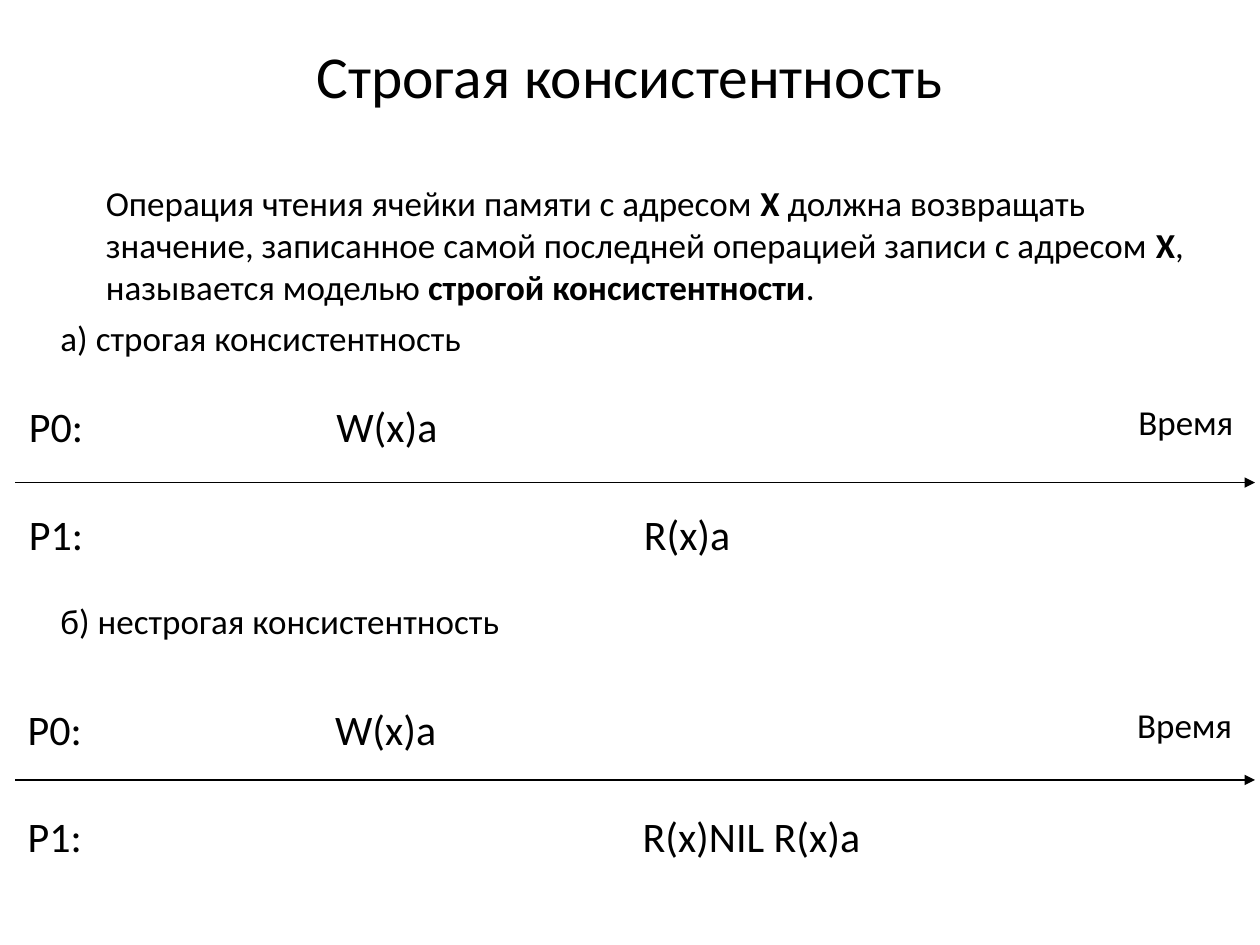
from dataclasses import dataclass

from lxml import etree
from pptx import Presentation
from pptx.dml.color import RGBColor
from pptx.enum.shapes import MSO_CONNECTOR
from pptx.enum.text import MSO_ANCHOR, MSO_AUTO_SIZE, PP_ALIGN
from pptx.oxml.ns import qn
from pptx.util import Inches, Pt

LEFT, CENTER, RIGHT = PP_ALIGN.LEFT, PP_ALIGN.CENTER, PP_ALIGN.RIGHT
MIDDLE, TOP = MSO_ANCHOR.MIDDLE, MSO_ANCHOR.TOP
STRAIGHT = MSO_CONNECTOR.STRAIGHT
NO_AUTOFIT = MSO_AUTO_SIZE.NONE

COLORS = {"text": "000000", "line": "000000"}
FONT = "Calibri"
COL_W, ROW_H = 2.44, 0.85
AXIS_LEFT, AXIS_RIGHT = 0.12, 9.96


@dataclass
class Timeline:
    left: float
    top: float
    axis_y: float
    read: str

    def rows(self) -> list[list[str]]:
        return [["P0:", "W(x)a", "", "Время"], ["P1:", "", self.read, ""]]


TIMELINES = [
    Timeline(0.13, 2.77, 3.83, "R(x)a"),
    Timeline(0.12, 5.17, 6.19, "R(x)NIL R(x)a"),
]

DEFINITION = [
    ("Операция чтения ячейки памяти с адресом ", False),
    ("X", True),
    (" должна возвращать значение, записанное самой последней операцией записи с адресом ", False),
    ("X", True),
    (", называется моделью ", False),
    ("строгой консистентности", True),
    (".", False),
]


def write(p, runs, *, size=20, align=LEFT, before=0, spacing=None) -> None:
    p.alignment = align
    p.space_before = Pt(before)
    if spacing:
        p.line_spacing = spacing
    for text, bold in [(runs, False)] if isinstance(runs, str) else runs:
        r = p.add_run()
        r.text = text
        r.font.name = FONT
        r.font.size = Pt(size)
        r.font.bold = bold
        r.font.color.rgb = RGBColor.from_string(COLORS["text"])


def place(sp, left: float, top: float, width: float, height: float, anchor) -> None:
    sp.left, sp.top = Inches(left), Inches(top)
    sp.width, sp.height = Inches(width), Inches(height)
    sp.text_frame.auto_size = NO_AUTOFIT
    sp.text_frame.vertical_anchor = anchor


def plain_paragraph(p, indent: float) -> None:
    pPr = p._p.get_or_add_pPr()
    pPr.set("marL", str(Inches(indent)))
    pPr.set("indent", "0")
    etree.SubElement(pPr, qn("a:buNone"))


def clear_cell(cell) -> None:
    tcPr = cell._tc.get_or_add_tcPr()
    for side in ("lnL", "lnR", "lnT", "lnB"):
        border = etree.SubElement(tcPr, qn(f"a:{side}"))
        etree.SubElement(border, qn("a:noFill"))
    cell.fill.background()


def add_operations(s, timeline: Timeline) -> None:
    rows = timeline.rows()
    table = s.shapes.add_table(
        len(rows), len(rows[0]), Inches(timeline.left), Inches(timeline.top),
        Inches(COL_W * len(rows[0])), Inches(ROW_H * len(rows))).table
    table.first_row = table.horz_banding = False
    for i, row in enumerate(rows):
        for j, text in enumerate(row):
            cell = table.cell(i, j)
            clear_cell(cell)
            if not text:
                continue
            is_time = text == "Время"
            cell.vertical_anchor = MIDDLE
            cell.margin_top = Inches(0.45 if is_time else 0.54)
            write(cell.text_frame.paragraphs[0], text, size=20 if is_time else 24,
                  align=RIGHT if is_time else LEFT,
                  before=5 if is_time else 6, spacing=0.62)


def add_axis(s, y: float) -> None:
    axis = s.shapes.add_connector(
        STRAIGHT, Inches(AXIS_LEFT), Inches(y), Inches(AXIS_RIGHT), Inches(y))
    axis.line.color.rgb = RGBColor.from_string(COLORS["line"])
    axis.line.width = Pt(0.75)
    etree.SubElement(axis.line._get_or_add_ln(), qn("a:tailEnd"), type="triangle")
    etree.SubElement(axis._element.spPr, qn("a:effectLst"))


def main() -> None:
    prs = Presentation()
    prs.slide_width, prs.slide_height = Inches(10), Inches(7.5)
    s = prs.slides.add_slide(prs.slide_layouts[1])

    title, body = s.placeholders
    place(title, 0.35, -0.03, 9.29, 1.25, MIDDLE)
    write(title.text_frame.paragraphs[0], "Строгая консистентность", size=34, align=CENTER)

    place(body, 0.38, 1.39, 9.27, 5.51, TOP)
    tf = body.text_frame
    paragraphs = [
        (DEFINITION, 0.36, 5),
        ("a) строгая консистентность", 0, 5),
        ("б) нестрогая консистентность", 0, 138),
    ]
    for i, (runs, indent, before) in enumerate(paragraphs):
        p = tf.add_paragraph() if i else tf.paragraphs[0]
        write(p, runs, before=before)
        plain_paragraph(p, indent)

    for timeline in TIMELINES:
        add_operations(s, timeline)
        add_axis(s, timeline.axis_y)

    prs.save("out.pptx")


if __name__ == "__main__":
    main()
